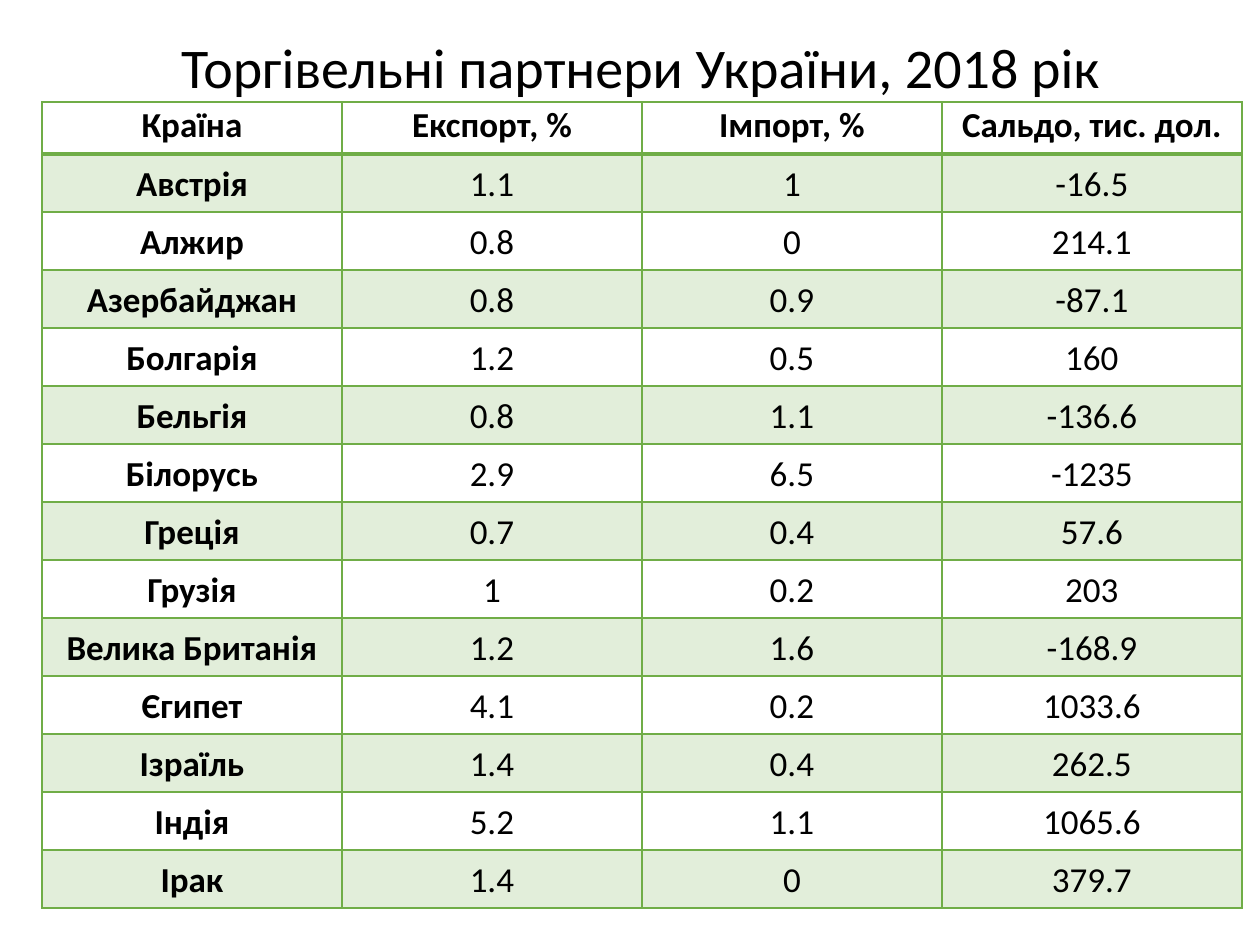
from dataclasses import dataclass

from lxml import etree
from pptx import Presentation
from pptx.dml.color import RGBColor
from pptx.enum.text import MSO_ANCHOR, MSO_AUTO_SIZE, PP_ALIGN
from pptx.oxml.ns import qn
from pptx.util import Emu, Pt

CENTER = PP_ALIGN.CENTER
TOP = MSO_ANCHOR.TOP
FIT_SHAPE = MSO_AUTO_SIZE.SHAPE_TO_FIT_TEXT

PX = 914400 // 126
FONT = "Calibri"
COLORS = {"text": "000000", "green": "70AD47"}
BAND_OPACITY = 20

TABLE_LEFT, TABLE_TOP = 42, 102
COLUMN_WIDTH, HEADER_HEIGHT, ROW_HEIGHT = 300, 52, 58
CELL_MARGIN = 6


@dataclass(frozen=True)
class Partner:
    country: str
    export: str
    imported: str
    balance: str

    def values(self) -> tuple:
        return self.country, self.export, self.imported, self.balance


HEADINGS = ("Країна", "Експорт, %", "Імпорт, %", "Сальдо, тис. дол.")
PARTNERS = (
    Partner("Австрія", "1.1", "1", "-16.5"),
    Partner("Алжир", "0.8", "0", "214.1"),
    Partner("Азербайджан", "0.8", "0.9", "-87.1"),
    Partner("Болгарія", "1.2", "0.5", "160"),
    Partner("Бельгія", "0.8", "1.1", "-136.6"),
    Partner("Білорусь", "2.9", "6.5", "-1235"),
    Partner("Греція", "0.7", "0.4", "57.6"),
    Partner("Грузія", "1", "0.2", "203"),
    Partner("Велика Британія", "1.2", "1.6", "-168.9"),
    Partner("Єгипет", "4.1", "0.2", "1033.6"),
    Partner("Ізраїль", "1.4", "0.4", "262.5"),
    Partner("Індія", "5.2", "1.1", "1065.6"),
    Partner("Ірак", "1.4", "0", "379.7"),
)


def px(length: int) -> Emu:
    return Emu(length * PX)


def write(paragraph, text: str, size: int, bold: bool = False) -> None:
    paragraph.alignment = CENTER
    run = paragraph.add_run()
    run.text = text
    run.font.name = FONT
    run.font.size = Pt(size)
    run.font.bold = bold
    run.font.color.rgb = RGBColor.from_string(COLORS["text"])


def set_borders(cell, top: int, bottom: int) -> None:
    properties = cell._tc.get_or_add_tcPr()
    widths = {"a:lnL": 1, "a:lnR": 1, "a:lnT": top, "a:lnB": bottom}
    for index, (side, width) in enumerate(widths.items()):
        line = etree.Element(qn(side), w=str(Pt(width)))
        fill = etree.SubElement(line, qn("a:solidFill"))
        etree.SubElement(fill, qn("a:srgbClr"), val=COLORS["green"])
        properties.insert(index, line)


def fill_cell(cell, banded: bool) -> None:
    if not banded:
        cell.fill.background()
        return
    cell.fill.solid()
    cell.fill.fore_color.rgb = RGBColor.from_string(COLORS["green"])
    color = cell._tc.tcPr.find(".//" + qn("a:srgbClr"))
    etree.SubElement(color, qn("a:alpha"), val=str(BAND_OPACITY * 1000))


def add_title(slide, text: str) -> None:
    title = slide.shapes.title
    title.left, title.top, title.width, title.height = (
        px(length) for length in (164, 26, 954, 81))
    frame = title.text_frame
    frame.word_wrap = False
    frame.auto_size = FIT_SHAPE
    frame.vertical_anchor = TOP
    write(frame.paragraphs[0], text, 32)


def add_partner_table(slide) -> None:
    rows = [HEADINGS] + [partner.values() for partner in PARTNERS]
    height = HEADER_HEIGHT + ROW_HEIGHT * len(PARTNERS)
    table = slide.shapes.add_table(
        len(rows), len(HEADINGS), px(TABLE_LEFT), px(TABLE_TOP),
        px(COLUMN_WIDTH * len(HEADINGS)), px(height)).table
    table.first_row = table.horz_banding = False
    for column in table.columns:
        column.width = px(COLUMN_WIDTH)

    for row_index, values in enumerate(rows):
        header = row_index == 0
        table.rows[row_index].height = px(HEADER_HEIGHT if header else ROW_HEIGHT)
        for column_index, value in enumerate(values):
            cell = table.cell(row_index, column_index)
            cell.margin_left = cell.margin_right = px(CELL_MARGIN)
            cell.margin_top = cell.margin_bottom = px(CELL_MARGIN)
            fill_cell(cell, banded=row_index % 2 == 1)
            # The rule under the header is twice as thick
            set_borders(cell, top=2 if row_index == 1 else 1,
                        bottom=2 if header else 1)
            paragraph = cell.text_frame.paragraphs[0]
            paragraph.line_spacing = Pt(22.5) if header else 1.07
            write(paragraph, value, 20, bold=header or column_index == 0)


def main() -> None:
    presentation = Presentation()
    presentation.slide_width, presentation.slide_height = px(1260), px(945)
    slide = presentation.slides.add_slide(presentation.slide_layouts[5])
    add_title(slide, "Торгівельні партнери України, 2018 рік")
    add_partner_table(slide)
    presentation.save("out.pptx")


if __name__ == "__main__":
    main()
